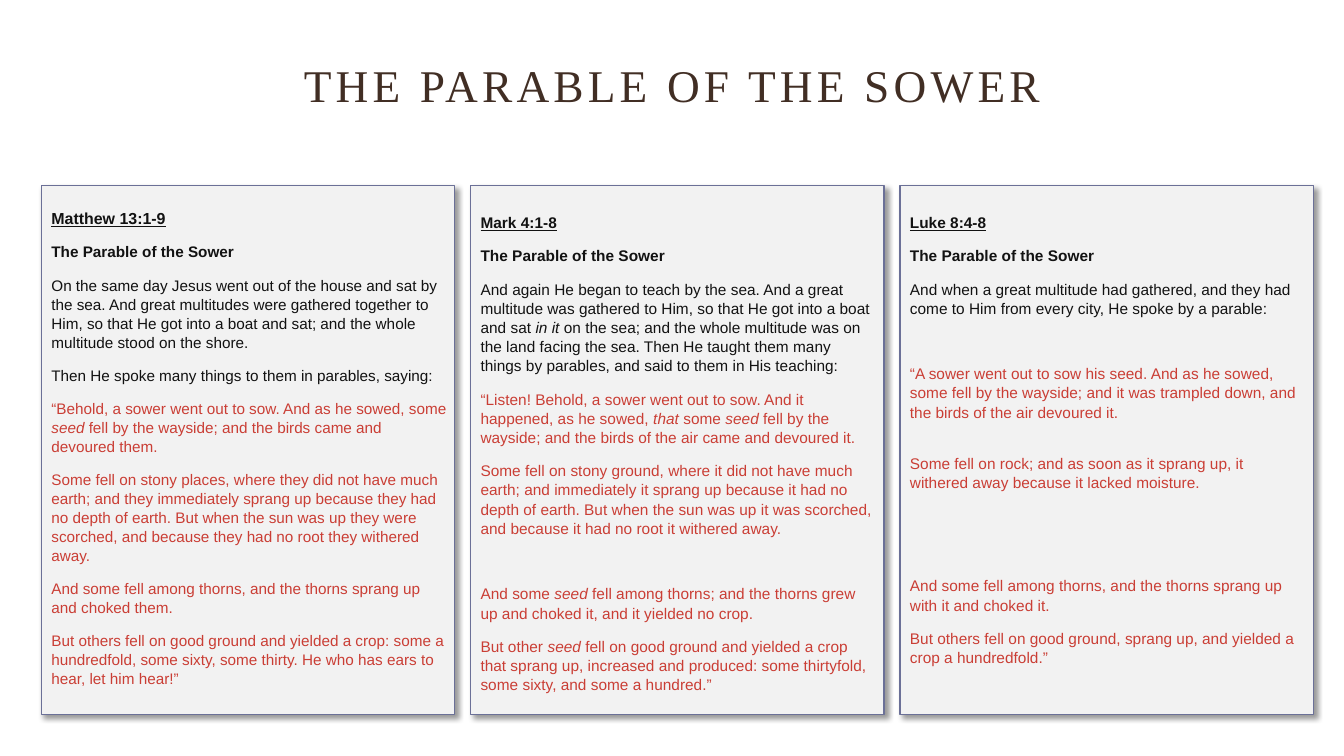
"""Build a slide that sets three Gospel accounts of the Sower side by side."""
from dataclasses import dataclass

from lxml import etree
from pptx import Presentation
from pptx.dml.color import RGBColor
from pptx.enum.shapes import MSO_SHAPE
from pptx.enum.text import MSO_ANCHOR, MSO_AUTO_SIZE, PP_ALIGN
from pptx.oxml import parse_xml
from pptx.oxml.ns import nsdecls, qn
from pptx.util import Pt

RECTANGLE = MSO_SHAPE.RECTANGLE
TOP, BOTTOM = MSO_ANCHOR.TOP, MSO_ANCHOR.BOTTOM
CENTER, LEFT = PP_ALIGN.CENTER, PP_ALIGN.LEFT
NO_FIT = MSO_AUTO_SIZE.NONE

TITLE = "THE PARABLE OF THE SOWER"
SUBTITLE = "The Parable of the Sower"

# Each passage: reference, then (speaker, space before, text); *word* is italic.
ACCOUNTS = [
    ("Matthew 13:1-9", [
        ("narrator", 10, "On the same day Jesus went out of the house and sat by the sea. And great multitudes were gathered together to Him, so that He got into a boat and sat; and the whole multitude stood on the shore."),
        ("narrator", 10, "Then He spoke many things to them in parables, saying:"),
        ("jesus", 10, "“Behold, a sower went out to sow. And as he sowed, some *seed* fell by the wayside; and the birds came and devoured them."),
        ("jesus", 10, "Some fell on stony places, where they did not have much earth; and they immediately sprang up because they had no depth of earth. But when the sun was up they were scorched, and because they had no root they withered away."),
        ("jesus", 10, "And some fell among thorns, and the thorns sprang up and choked them."),
        ("jesus", 10, "But others fell on good ground and yielded a crop: some a hundredfold, some sixty, some thirty. He who has ears to hear, let him hear!”"),
    ]),
    ("Mark 4:1-8", [
        ("narrator", 10, "And again He began to teach by the sea. And a great multitude was gathered to Him, so that He got into a boat and sat *in it* on the sea; and the whole multitude was on the land facing the sea. Then He taught them many things by parables, and said to them in His teaching:"),
        ("jesus", 10, "“Listen! Behold, a sower went out to sow. And it happened, as he sowed, *that* some *seed* fell by the wayside; and the birds of the air came and devoured it."),
        ("jesus", 10, "Some fell on stony ground, where it did not have much earth; and immediately it sprang up because it had no depth of earth. But when the sun was up it was scorched, and because it had no root it withered away."),
        ("jesus", 33, "And some *seed* fell among thorns; and the thorns grew up and choked it, and it yielded no crop."),
        ("jesus", 10, "But other *seed* fell on good ground and yielded a crop that sprang up, increased and produced: some thirtyfold, some sixty, and some a hundred.”"),
    ]),
    ("Luke 8:4-8", [
        ("narrator", 10, "And when a great multitude had gathered, and they had come to Him from every city, He spoke by a parable:"),
        ("jesus", 33, "“A sower went out to sow his seed. And as he sowed, some fell by the wayside; and it was trampled down, and the birds of the air devoured it."),
        ("jesus", 23, "Some fell on rock; and as soon as it sprang up, it withered away because it lacked moisture."),
        ("jesus", 60, "And some fell among thorns, and the thorns sprang up with it and choked it."),
        ("jesus", 10, "But others fell on good ground, sprang up, and yielded a crop a hundredfold.”"),
    ]),
]


@dataclass(frozen=True)
class Theme:
    """Colours, fonts and type sizes."""
    title: str = "412E24"
    narrator: str = "121212"
    jesus: str = "CA3E35"
    card: str = "F2F2F2"
    border: str = "6B7097"
    title_font: str = "Times New Roman"
    body_font: str = "Arial"
    title_size: float = 32.4
    heading_sizes: tuple = (11.4, 11, 11)
    body_sizes: tuple = (10.9, 11, 11)
    heading_spacing: tuple = (0.8, 1.04, 1.04)
    body_spacing: float = 1.04


THEME = Theme()
FIRST_LEFT, COLUMN_STEP = 29.5, 306.7
CARD_TOP, CARD_WIDTH, CARD_HEIGHT = 132.5, 295.2, 378
TEXT_TOP, TEXT_WIDTH, TEXT_HEIGHT = 148.3, 297.4, 355.7


def place(box, left, top, width, height):
    """Move and size a shape, in points."""
    box.left, box.top, box.width, box.height = map(Pt, (left, top, width, height))


def add_span(para, text, font, size, color, **style):
    """Add one formatted run."""
    span = para.add_run()
    span.text = text
    span.font.name, span.font.size = font, Pt(size)
    span.font.color.rgb = RGBColor.from_string(color)
    for name, value in style.items():
        setattr(span.font, name, value)
    return span


def add_card(page, left):
    """Add one bordered card with a soft shadow."""
    card = page.shapes.add_shape(RECTANGLE, Pt(left), Pt(CARD_TOP), Pt(CARD_WIDTH), Pt(CARD_HEIGHT))
    card.fill.solid()
    card.fill.fore_color.rgb = RGBColor.from_string(THEME.card)
    card.line.color.rgb = RGBColor.from_string(THEME.border)
    card.line.width = Pt(1)
    card.element.spPr.append(parse_xml(
        f'<a:effectLst {nsdecls("a")}><a:outerShdw blurRad="{Pt(4)}" dist="{Pt(3)}" dir="2700000" '
        'algn="tl" rotWithShape="0"><a:srgbClr val="000000"><a:alpha val="40000"/></a:srgbClr>'
        '</a:outerShdw></a:effectLst>'))


def fill_account(box, column, reference, verses):
    """Write a reference, its subtitle and its verses into a box."""
    frame = box.text_frame
    frame.word_wrap, frame.auto_size, frame.vertical_anchor = True, NO_FIT, TOP
    size = THEME.body_sizes[column]
    rows = [("narrator", 0, reference), ("narrator", 10, SUBTITLE), *verses]
    for index, (speaker, gap, text) in enumerate(rows):
        para = frame.add_paragraph() if index else frame.paragraphs[0]
        para.alignment, para.space_before, para.space_after = LEFT, Pt(gap), Pt(0)
        para.line_spacing = THEME.body_spacing if index else THEME.heading_spacing[column]
        properties = para._p.get_or_add_pPr()
        properties.set("marL", "0")
        properties.set("indent", "0")
        etree.SubElement(properties, qn("a:buNone"))
        for part, words in enumerate(text.split("*")):
            add_span(para, words, THEME.body_font, size if index else THEME.heading_sizes[column],
                     getattr(THEME, speaker), bold=index < 2, underline=index == 0, italic=part % 2 == 1)


def fill_title(title):
    """Place and write the slide title."""
    place(title, 105.8, 44.6, 748.8, 76.3)
    frame = title.text_frame
    frame.word_wrap, frame.auto_size, frame.vertical_anchor = True, NO_FIT, BOTTOM
    frame.margin_top, frame.margin_bottom = Pt(0), Pt(41)
    para = frame.paragraphs[0]
    para.alignment, para.line_spacing = CENTER, 0.9
    span = add_span(para, TITLE, THEME.title_font, THEME.title_size, THEME.title)
    span.font._element.set("spc", "300")


def main():
    """Build and save the deck."""
    deck = Presentation()
    deck.slide_width, deck.slide_height = Pt(960), Pt(540)
    page = deck.slides.add_slide(deck.slide_layouts[1])
    title, body = page.shapes.title, page.placeholders[1]
    lefts = [FIRST_LEFT + column * COLUMN_STEP for column in range(len(ACCOUNTS))]
    for left in lefts:
        add_card(page, left)
    for holder in (title, body):
        holder.element.getparent().append(holder.element)
    fill_title(title)
    for column, (left, (reference, verses)) in enumerate(zip(lefts, ACCOUNTS)):
        box = page.shapes.add_textbox(0, 0, 0, 0) if column else body
        place(box, left, TEXT_TOP, TEXT_WIDTH, TEXT_HEIGHT)
        fill_account(box, column, reference, verses)
    deck.save("out.pptx")


if __name__ == "__main__":
    main()
